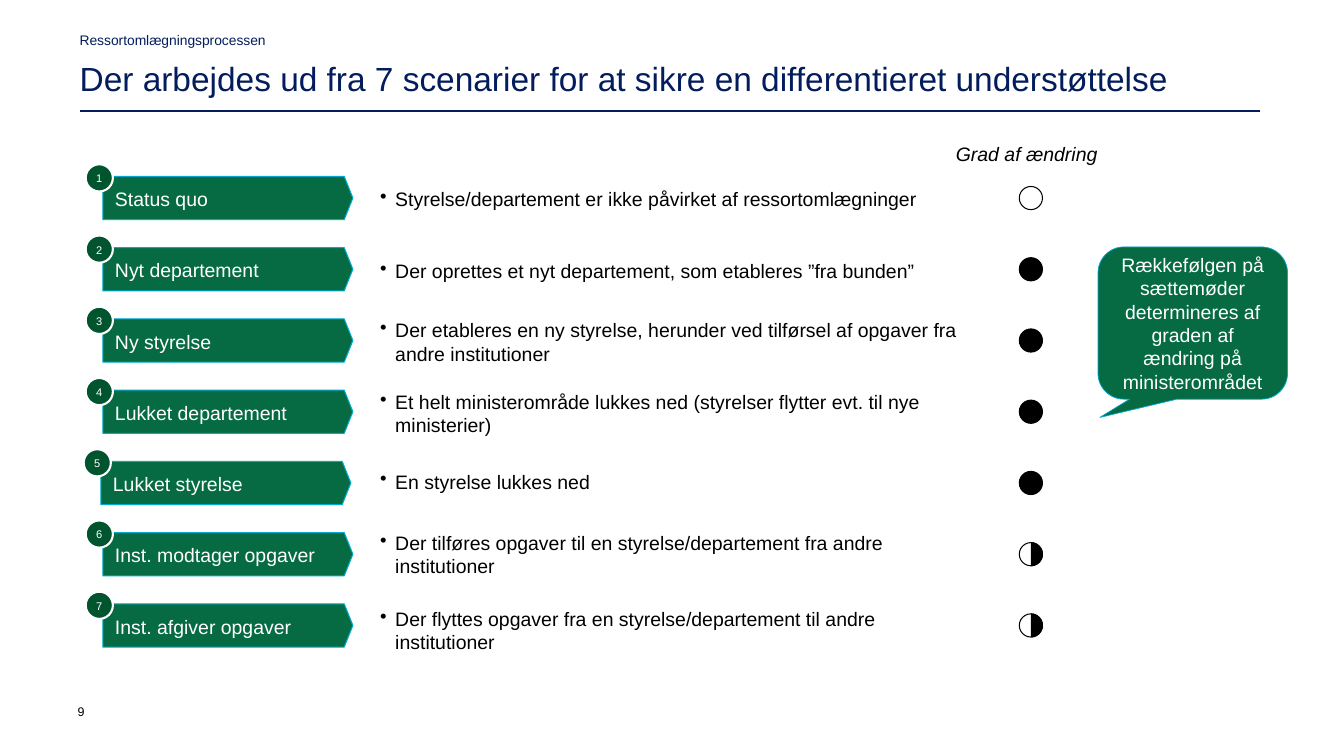
from lxml.etree import SubElement
from pptx import Presentation
from pptx.dml.color import RGBColor
from pptx.enum.shapes import MSO_CONNECTOR, MSO_SHAPE as Form
from pptx.enum.text import MSO_ANCHOR as Anchor, MSO_AUTO_SIZE as Fit, PP_ALIGN as Align
from pptx.oxml.ns import qn
from pptx.util import Inches, Pt

COLORS = {
    "navy": "031D5C", "green": "066B43", "dark": "00542E",
    "cyan": "00AAD2", "white": "FFFFFF", "black": "000000",
}
FONT = "Arial"
BODY = 13.9
TOP, PITCH = 1.75, 4.24 / 6
DOT = 0.23

# label, left shift, description, its top, degree of change (0 to 2 halves)
ROWS = [
    ("Status quo", 0, "Styrelse/departement er ikke påvirket af ressortomlægninger", 1.86, 0),
    ("Nyt departement", 0, "Der oprettes et nyt departement, som etableres ”fra bunden”", 2.57, 2),
    ("Ny styrelse", 0, "Der etableres en ny styrelse, herunder ved tilførsel af opgaver fra "
     "andre institutioner", 3.16, 2),
    ("Lukket departement", 0, "Et helt ministerområde lukkes ned (styrelser flytter evt. til nye "
     "ministerier)", 3.87, 2),
    ("Lukket styrelse", -0.02, "En styrelse lukkes ned", 4.66, 2),
    ("Inst. modtager opgaver", 0, "Der tilføres opgaver til en styrelse/departement fra andre "
     "institutioner", 5.27, 1),
    ("Inst. afgiver opgaver", 0, "Der flyttes opgaver fra en styrelse/departement til andre "
     "institutioner", 6.02, 1),
]


def color(name):
    return RGBColor.from_string(COLORS[name])


def write(shape, text, size, ink, inset=(0, 0, 0, 0), anchor=Anchor.TOP,
          align=Align.LEFT, space=1.0, bullet=False, italic=False):
    """Fill a shape's text frame with one formatted paragraph."""
    frame = shape.text_frame
    sides = ("margin_left", "margin_top", "margin_right", "margin_bottom")
    style = {side: Inches(gap) for side, gap in zip(sides, inset)}
    style |= {"word_wrap": True, "auto_size": Fit.NONE, "vertical_anchor": anchor}
    for key, value in style.items():
        setattr(frame, key, value)
    frame.text = text
    para = frame.paragraphs[0]
    para.alignment, para.line_spacing, para.space_before = align, space, Pt(0)
    if bullet:
        para.level = 1
        props = para._p.get_or_add_pPr()
        props.set("marL", str(Inches(0.15)))
        props.set("indent", str(Inches(-0.15)))
        SubElement(props, qn("a:buChar")).set("char", "•")
    font = para.runs[0].font
    for key, value in {"name": FONT, "size": Pt(size), "italic": italic}.items():
        setattr(font, key, value)
    font.color.rgb = color(ink)


def add_text(slide, box, text, size, ink="black", **style):
    label = slide.shapes.add_textbox(*map(Inches, box))
    write(label, text, size, ink, **style)


def add_form(slide, form, box, fill, line, width, adjust=()):
    shape = slide.shapes.add_shape(form, *map(Inches, box))
    shape.shadow.inherit = False
    shape.fill.solid()
    shape.fill.fore_color.rgb = color(fill)
    shape.line.color.rgb = color(line)
    shape.line.width = Pt(width)
    for index, value in enumerate(adjust):
        shape.adjustments[index] = value
    return shape


def add_head(slide):
    title = slide.shapes.title
    box = map(Inches, (0.79, 0.62, 11.71, 0.39))
    for key, value in zip(("left", "top", "width", "height"), box):
        setattr(title, key, value)
    write(title, "Der arbejdes ud fra 7 scenarier for at sikre en differentieret understøttelse",
          23.9, "navy", space=0.9)
    add_text(slide, (0.79, 0.33, 11.71, 0.21), "Ressortomlægningsprocessen",
             9.9, "navy", inset=(0, 0, 1.13, 0), space=0.9)
    rule = slide.shapes.add_connector(
        MSO_CONNECTOR.STRAIGHT, *map(Inches, (0.79, 1.1, 12.5, 1.1)))
    rule.line.color.rgb = color("navy")
    rule.line.width = Pt(1.5)
    SubElement(rule._element.spPr, qn("a:effectLst"))


def add_tag(slide, number, label, left, top):
    """Pentagon with a scenario name and a numbered badge on its corner."""
    arrow = add_form(slide, Form.PENTAGON, (left, top, 2.48, 0.43),
                     "green", "cyan", 0.75, [0.2])
    write(arrow, label, BODY, "white", inset=(0.12,) * 4, anchor=Anchor.MIDDLE, space=1.08)
    badge = add_form(slide, Form.OVAL, (left - 0.17, top - 0.12, 0.27, 0.27),
                     "dark", "white", 1.5)
    write(badge, str(number), 7.9, "white", anchor=Anchor.MIDDLE,
          align=Align.CENTER, space=1.08)


def add_degree(slide, top, halves):
    """Circle that is empty, half full or full."""
    box = (10.11, top, DOT, DOT)
    add_form(slide, Form.OVAL, box, "black" if halves == 2 else "white", "black", 0.75)
    if halves == 1:
        add_form(slide, Form.ARC, box, "black", "black", 0.75, [162, 54])


def main():
    deck = Presentation()
    deck.slide_width, deck.slide_height = Inches(13.33), Inches(7.5)
    slide = deck.slides.add_slide(deck.slide_layouts[5])
    add_head(slide)

    # Scenario rows
    add_text(slide, (9.48, 1.41, 1.49, 0.23), "Grad af ændring", BODY, italic=True)
    for index, (label, shift, text, text_top, halves) in enumerate(ROWS):
        top = TOP + index * PITCH
        add_tag(slide, index + 1, label, 1.02 + shift, top)
        tall = 0.47 if len(text) > 60 else 0.23
        add_text(slide, (3.77, text_top, 5.79, tall), text, BODY, bullet=True)
        add_degree(slide, top + 0.1, halves)

    # Callout
    note = add_form(slide, Form.ROUNDED_RECTANGULAR_CALLOUT, (10.89, 2.45, 1.88, 1.51),
                    "green", "cyan", 0.5, [-0.49, 0.62, 0.17])
    write(note, "Rækkefølgen på sættemøder determineres af graden af ændring på ministerområdet",
          BODY, "white", inset=(0.1, 0.05, 0.1, 0.05), anchor=Anchor.MIDDLE, align=Align.CENTER)

    # Page number
    add_text(slide, (0.77, 6.98, 0.31, 0.39), "9", 8.9)
    deck.save("out.pptx")


if __name__ == "__main__":
    main()
